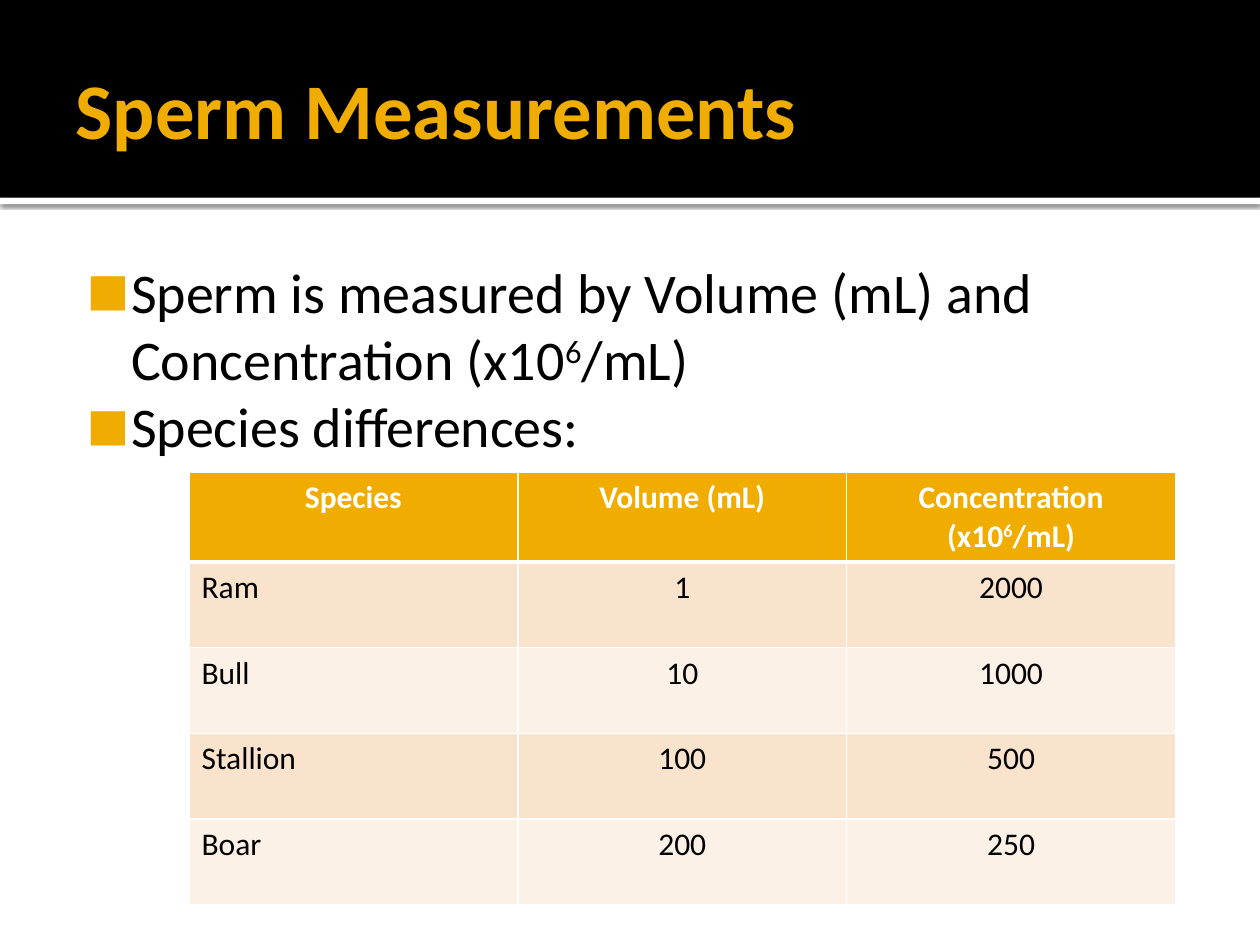
"""Build the slide on sperm measurements: banner title, bullet list and species table."""
from lxml import etree
from pptx import Presentation
from pptx.dml.color import RGBColor
from pptx.enum.shapes import MSO_SHAPE
from pptx.enum.text import MSO_ANCHOR, MSO_AUTO_SIZE, PP_ALIGN
from pptx.oxml import parse_xml
from pptx.oxml.ns import nsdecls, qn
from pptx.util import Inches, Pt

RECTANGLE = MSO_SHAPE.RECTANGLE
MIDDLE, TOP = MSO_ANCHOR.MIDDLE, MSO_ANCHOR.TOP
LEFT, CENTER = PP_ALIGN.LEFT, PP_ALIGN.CENTER
NO_AUTOFIT = MSO_AUTO_SIZE.NONE

COLORS = {
    "accent": "F0AD00",
    "black": "000000",
    "white": "FFFFFF",
    "dark band": "F9E3CC",
    "light band": "FCF1E7",
}
CONCENTRATION = ["Concentration (x10", "^6", "/mL)"]
BULLETS = [
    ["Sperm is measured by Volume (mL) and Concentration (x10", "^6", "/mL)"],
    ["Species differences:"],
]
ROWS = [
    [["Species"], ["Volume (mL)"], CONCENTRATION],
    [["Ram"], ["1"], ["2000"]],
    [["Bull"], ["10"], ["1000"]],
    [["Stallion"], ["100"], ["500"]],
    [["Boar"], ["200"], ["250"]],
]


def add_runs(paragraph, pieces, size, color, bold=False):
    for piece in pieces:
        run = paragraph.add_run()
        run.text = piece.lstrip("^")
        run.font.name = "Calibri"
        run.font.size = Pt(size)
        run.font.bold = bold
        run.font.color.rgb = RGBColor.from_string(COLORS[color])
        if piece.startswith("^"):
            run.font._element.set("baseline", "30000")


def place_text(shape, box, insets, anchor):
    shape.left, shape.top, shape.width, shape.height = map(Inches, box)
    frame = shape.text_frame
    frame.word_wrap = True
    frame.auto_size = NO_AUTOFIT
    frame.vertical_anchor = anchor
    (frame.margin_left, frame.margin_top,
     frame.margin_right, frame.margin_bottom) = map(Inches, insets)
    return frame


presentation = Presentation()
presentation.slide_width, presentation.slide_height = Inches(10), Inches(7.5)
slide = presentation.slides.add_slide(presentation.slide_layouts[1])
title, body = slide.shapes.title, slide.placeholders[1]

banner_height = 1.57
for color, top, height in [("white", banner_height, 0.05), ("black", 0, banner_height)]:
    band = slide.shapes.add_shape(
        RECTANGLE, 0, Inches(top), presentation.slide_width, Inches(height))
    band.shadow.inherit = False
    band.fill.solid()
    band.fill.fore_color.rgb = RGBColor.from_string(COLORS[color])
    band.line.fill.background()
    title.element.addprevious(band.element)
    if color == "white":
        effects = band.element.spPr.find(qn("a:effectLst"))
        effects.append(parse_xml(
            f'<a:outerShdw {nsdecls("a")} blurRad="{Pt(2.5)}" dist="{Pt(0.8)}" '
            f'dir="5400000" algn="t" rotWithShape="0"><a:srgbClr val="{COLORS["black"]}">'
            '<a:alpha val="60000"/></a:srgbClr></a:outerShdw>'))

title_frame = place_text(title, (0.5, 0.17, 9, 1.37), (0.1, 0.05, 0.05, 0.05), MIDDLE)
title_frame.paragraphs[0].alignment = LEFT
add_runs(title_frame.paragraphs[0], ["Sperm Measurements"], 45, "accent", True)

body_frame = place_text(body, (0.5, 1.94, 9, 5.06), (0.06, 0.1, 0.1, 0.05), TOP)
for index, pieces in enumerate(BULLETS):
    paragraph = body_frame.paragraphs[0] if index == 0 else body_frame.add_paragraph()
    paragraph.space_before = Pt(0)
    properties = paragraph._p.get_or_add_pPr()
    properties.set("marL", str(Inches(0.48)))
    properties.set("indent", str(Inches(-0.35)))
    bullet_color = etree.SubElement(properties, qn("a:buClr"))
    etree.SubElement(bullet_color, qn("a:srgbClr"), val=COLORS["accent"])
    etree.SubElement(properties, qn("a:buSzPct"), val="80000")
    etree.SubElement(properties, qn("a:buFont"), typeface="Calibri")
    etree.SubElement(properties, qn("a:buChar"), char="■")
    add_runs(paragraph, pieces, 32, "black")

column_width, row_height = 2.61, 0.68
table = slide.shapes.add_table(
    len(ROWS), len(ROWS[0]), Inches(1.5), Inches(3.75),
    Inches(column_width * len(ROWS[0])), Inches(row_height * len(ROWS))).table
for row_index, row in enumerate(ROWS):
    is_header = row_index == 0
    band_color = "dark band" if row_index % 2 else "light band"
    for column_index, pieces in enumerate(row):
        cell = table.cell(row_index, column_index)
        cell_properties = cell._tc.get_or_add_tcPr()
        for side in "LRTB":
            thick = (row_index, side) in [(0, "B"), (1, "T")]
            border = etree.SubElement(
                cell_properties, qn(f"a:ln{side}"), w=str(Pt(3 if thick else 1)))
            border_fill = etree.SubElement(border, qn("a:solidFill"))
            etree.SubElement(border_fill, qn("a:srgbClr"), val=COLORS["white"])
        cell.fill.solid()
        cell.fill.fore_color.rgb = RGBColor.from_string(
            COLORS["accent" if is_header else band_color])
        paragraph = cell.text_frame.paragraphs[0]
        paragraph.alignment = CENTER if is_header or column_index else LEFT
        add_runs(paragraph, pieces, 18, "white" if is_header else "black", is_header)

presentation.save("out.pptx")
